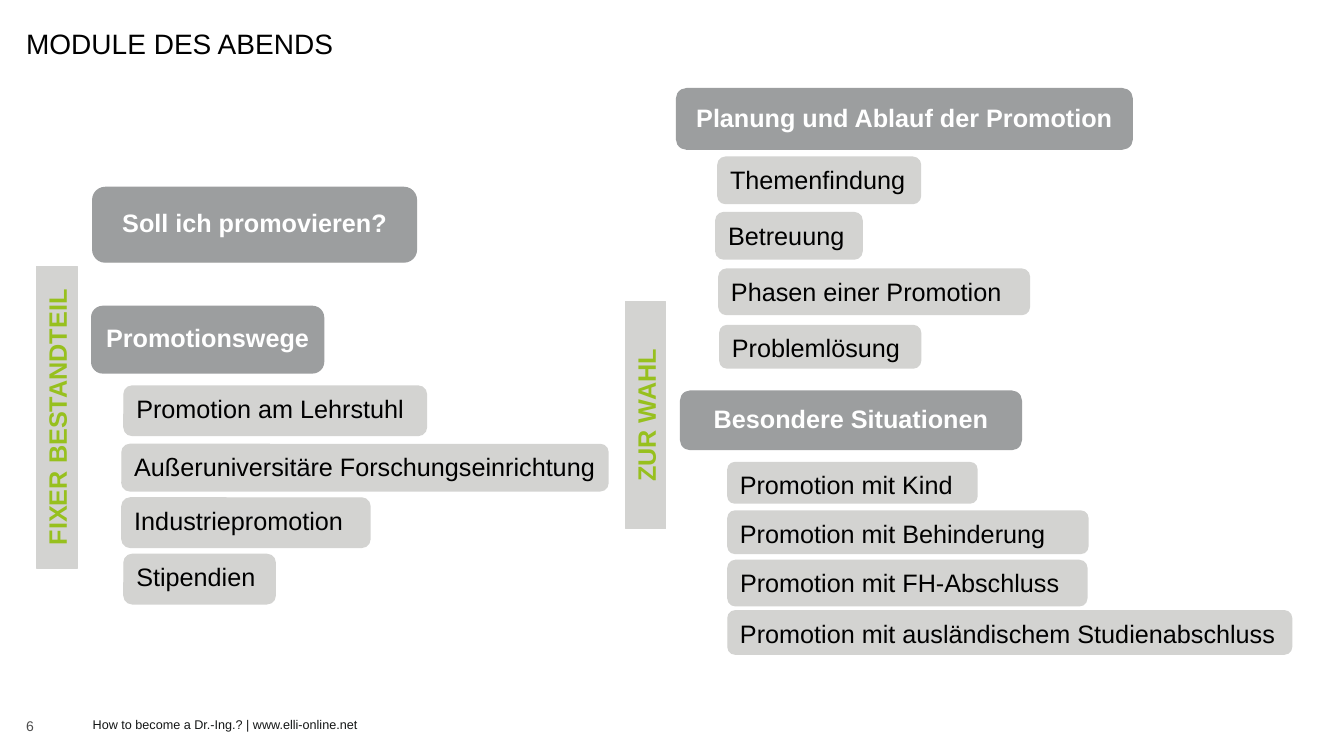
from pptx import Presentation
from pptx.dml.color import RGBColor
from pptx.enum.shapes import MSO_SHAPE as Shape
from pptx.enum.text import MSO_ANCHOR as Anchor, PP_ALIGN as Align
from pptx.util import Inches, Pt

COLORS = {
    "heading": "9C9E9F",
    "panel": "D3D3D1",
    "accent": "97C01E",
    "white": "FFFFFF",
    "black": "000000",
    "footer": "141616",
    "number": "4D4D4D",
}

HEADINGS = [
    ("Soll ich promovieren?", 0.92, 1.86, 3.21, 0.74),
    ("Promotionswege", 0.91, 3.04, 2.3, 0.66),
    ("Planung und Ablauf der Promotion", 6.71, 0.88, 4.52, 0.6),
    ("Besondere Situationen", 6.75, 3.88, 3.38, 0.58),
]

TOPICS = [
    ("Promotion am Lehrstuhl", 1.23, 3.83, 3, 0.49),
    ("Außeruniversitäre Forschungseinrichtung", 1.21, 4.41, 4.82, 0.46),
    ("Industriepromotion", 1.21, 4.94, 2.46, 0.49),
    ("Stipendien", 1.23, 5.5, 1.5, 0.49),
    ("Themenfindung", 7.12, 1.56, 2.01, 0.46),
    ("Betreuung", 7.1, 2.11, 1.45, 0.46),
    ("Phasen einer Promotion", 7.13, 2.67, 3.08, 0.45),
    ("Problemlösung", 7.14, 3.23, 1.99, 0.42),
    ("Promotion mit Kind", 7.22, 4.59, 2.47, 0.4),
    ("Promotion mit Behinderung", 7.22, 5.07, 3.57, 0.42),
    ("Promotion mit FH-Abschluss", 7.22, 5.56, 3.56, 0.45),
    ("Promotion mit ausländischem Studienabschluss", 7.22, 6.06, 5.59, 0.43),
]

SIDE_LABELS = [
    ("FIXER BESTANDTEIL", -0.93, 3.94, 2.99, 0.4),
    ("ZUR WAHL", 5.28, 3.92, 2.25, 0.4),
]


def apply_format(target, values):
    """Set each attribute of the target from a dict."""
    for name, value in values.items():
        setattr(target, name, value)


def write_text(box, text, color, font, frame, para_format):
    """Fill a box with one formatted paragraph."""
    apply_format(box.text_frame, {"word_wrap": True, **frame})
    para = box.text_frame.paragraphs[0]
    apply_format(para, para_format)
    span = para.add_run()
    span.text = text
    apply_format(span.font, {"name": "Arial", **font})
    span.font.color.rgb = RGBColor.from_string(COLORS[color])


def add_panel(page, kind, bounds, color, line_width):
    """Add a flat filled shape with a line of the same colour."""
    panel = page.shapes.add_shape(kind, *map(Inches, bounds))
    panel.shadow.inherit = False
    fill = RGBColor.from_string(COLORS[color])
    panel.fill.solid()
    panel.fill.fore_color.rgb = fill
    panel.line.color.rgb = fill
    panel.line.width = Pt(line_width)
    return panel


def add_heading(page, text, *bounds):
    """Add a dark module heading."""
    panel = add_panel(page, Shape.ROUNDED_RECTANGLE, bounds, "heading", 1)
    margins = {"margin_left": Inches(0.07), "margin_right": Inches(0.07)}
    write_text(panel, text, "white", {"size": Pt(18), "bold": True},
               {"vertical_anchor": Anchor.MIDDLE, **margins},
               {"alignment": Align.CENTER, "line_spacing": 0.9})


def add_topic(page, text, *bounds):
    """Add a light topic box below a heading."""
    panel = add_panel(page, Shape.ROUNDED_RECTANGLE, bounds, "panel", 1)
    write_text(panel, text, "black", {"size": Pt(18)},
               {"vertical_anchor": Anchor.TOP, "margin_right": Inches(0)},
               {"alignment": Align.LEFT})


def add_side_label(page, text, *bounds):
    """Add an upright label beside a group of modules."""
    panel = add_panel(page, Shape.RECTANGLE, bounds, "panel", 0.75)
    panel.rotation = 270
    write_text(panel, text, "accent", {"size": Pt(18), "bold": True},
               {"vertical_anchor": Anchor.TOP}, {"alignment": Align.CENTER})


def add_label(page, text, bounds, size, color, frame=None, para_format=None):
    """Add a plain text box centred vertically."""
    box = page.shapes.add_textbox(*map(Inches, bounds))
    write_text(box, text, color, {"size": Pt(size)},
               {"vertical_anchor": Anchor.MIDDLE, **(frame or {})},
               para_format or {})


def main():
    """Build the slide and save the deck."""
    deck = Presentation()
    deck.slide_width, deck.slide_height = Inches(13.33), Inches(7.5)
    page = deck.slides.add_slide(deck.slide_layouts[6])
    sides = ("left", "top", "right", "bottom")
    add_label(page, "How to become a Dr.-Ing.? | www.elli-online.net",
              (0.92, 7, 7.56, 0.37), 9, "footer",
              {f"margin_{side}": Inches(0) for side in sides})
    add_label(page, "MODULE DES ABENDS", (0.16, 0.22, 9.37, 0.39), 20, "black",
              para_format={"line_spacing": 1.1})
    add_label(page, "6", (0.16, 7.08, 1.07, 0.24), 10, "number")
    for heading in HEADINGS:
        add_heading(page, *heading)
    for topic in TOPICS:
        add_topic(page, *topic)
    for label in SIDE_LABELS:
        add_side_label(page, *label)
    deck.save("out.pptx")


if __name__ == "__main__":
    main()
